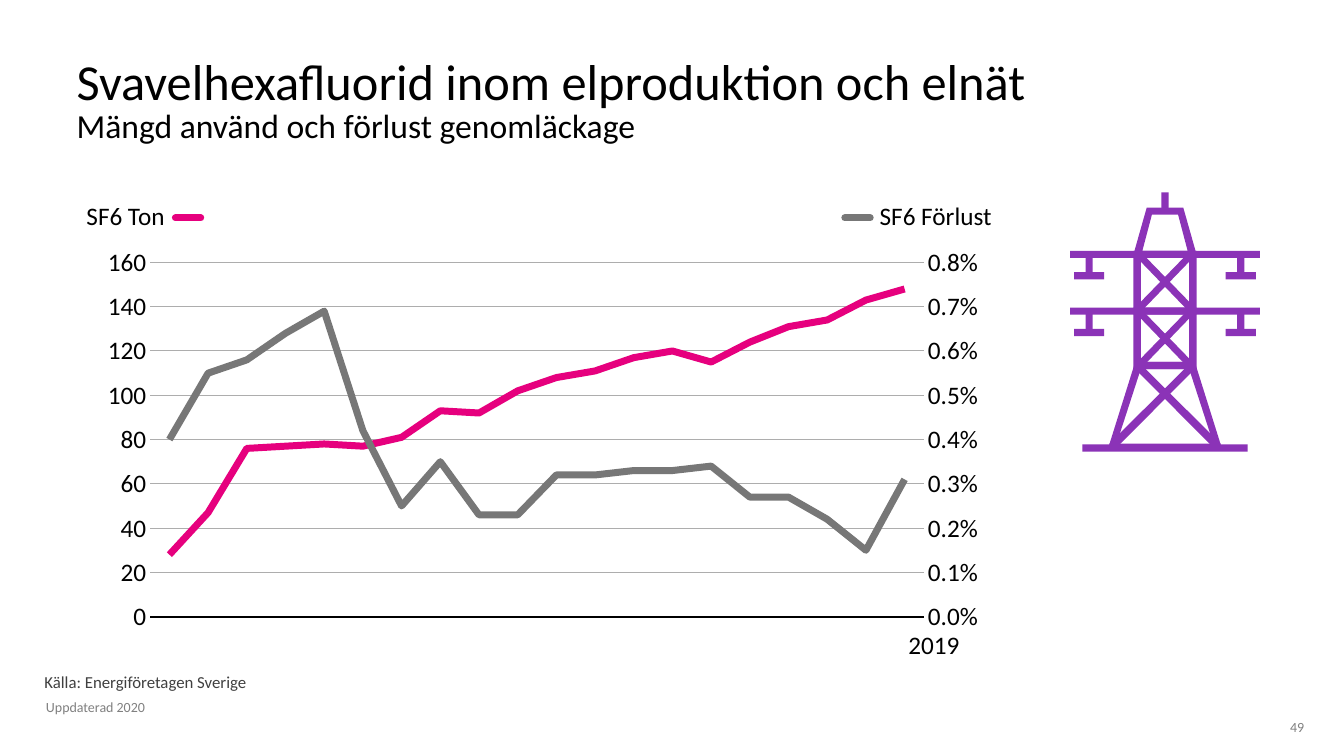
"""Build a slide on sulphur hexafluoride in Swedish power production and grids."""
import copy

import lxml.etree
import pptx
import pptx.chart.axis
import pptx.chart.data
import pptx.dml.color
import pptx.enum.chart
import pptx.enum.shapes
import pptx.enum.text
import pptx.oxml
import pptx.oxml.ns
import pptx.util

Cm = pptx.util.Cm
Pt = pptx.util.Pt
qn = pptx.oxml.ns.qn
ALIGN = pptx.enum.text.PP_ALIGN
ANCHOR = pptx.enum.text.MSO_ANCHOR

FONT = "Calibri"
BLACK, DARK, MUTED, RULE = "000000", "404040", "808080", "ADADAD"
PINK, GREY, PURPLE = "E6007E", "777777", "8B33B7"

TITLE = [("Svavelhexafluorid inom elproduktion och elnät", 36),
         ("Mängd använd och förlust genomläckage", 24)]
YEARS = [str(year) for year in range(2000, 2020)]
TONNES = [28, 47, 76, 77, 78, 77, 81, 93, 92, 102,
          108, 111, 117, 120, 115, 124, 131, 134, 143, 148]
LOSS_PERCENT = [0.40, 0.55, 0.58, 0.64, 0.69, 0.42, 0.25, 0.35, 0.23, 0.23,
                0.32, 0.32, 0.33, 0.33, 0.34, 0.27, 0.27, 0.22, 0.15, 0.31]
CHART_BOX = (1.12, 4.27, 30.96, 12.47)
PLOT_AREA = {"x": 0.086, "y": 0.188, "w": 0.63, "h": 0.716}
LEGEND = [("SF6 Ton", (1.93, 5.0, 3.02, 0.94), 4.42, PINK),
          ("SF6 Förlust", (21.92, 5.0, 3.89, 0.94), 21.29, GREY)]
LEGEND_Y, LEGEND_KEY = 5.49, 0.64
LABELS = [
    ("Källa: Energiföretagen Sverige", (1.12, 16.92, 12.34, 0.58),
     dict(size=12, color=DARK, anchor=ANCHOR.MIDDLE, inset=False)),
    ("49", (31.88, 18.11, 0.99, 0.51),
     dict(size=10, color=MUTED, align=ALIGN.RIGHT, inset=False, spacing=1.0)),
    ("2019", (22.58, 14.78, 1.91, 3.02),
     dict(align=ALIGN.CENTER, anchor=ANCHOR.MIDDLE)),
    ("Uppdaterad 2020", (0.91, 17.53, 3.43, 0.64), dict(size=10, color=MUTED)),
]

TOWER_X, BEAM = 29.36, 0.18
ARM_TOPS = [6.32, 7.75]
# top, half width at top, bottom, half width at bottom
FRAMES = [
    [(6.32, 0.80, 7.92, 0.80), (6.50, 0.61, 7.75, 0.61)],
    [(7.75, 0.80, 9.30, 0.80), (7.92, 0.61, 9.12, 0.61)],
    [(5.23, 0.46, 6.50, 0.82), (5.41, 0.33, 6.32, 0.57)],
    [(9.12, 0.75, 11.35, 1.45), (9.30, 0.61, 11.18, 1.22)],
]
ARM_BRACE = [(0.62, 1.55), (-0.75, 0.13), (-0.64, 0), (0.75, 1.43)]
LEG_BRACE = [(-1.27, 11.33), (-1.40, 11.18), (0.62, 9.17), (0.75, 9.30)]
SPIRE_AND_GROUND = [(0, 4.85, BEAM, 0.46), (0, 11.20, 4.17, BEAM)]


def rgb(color):
    return pptx.dml.color.RGBColor.from_string(color)


def write(frame, lines, align=ALIGN.LEFT, anchor=ANCHOR.TOP, size=18,
          color=BLACK, spacing=0.9, inset=True):
    frame.word_wrap = True
    frame.auto_size = pptx.enum.text.MSO_AUTO_SIZE.NONE
    frame.vertical_anchor = anchor
    if not inset:
        frame.margin_left = frame.margin_right = 0
        frame.margin_top = frame.margin_bottom = 0
    paragraph = frame.paragraphs[0]
    paragraph.alignment = align
    paragraph.line_spacing = spacing
    paragraph.space_before = Pt(0)
    for index, (text, points) in enumerate(
            [(lines, size)] if isinstance(lines, str) else lines):
        if index:
            paragraph.add_line_break()
        run = paragraph.add_run()
        run.text = text
        run.font.name, run.font.size = FONT, Pt(points)
        run.font.color.rgb = rgb(color)


def add_label(slide, text, box, **style):
    label = slide.shapes.add_textbox(*map(Cm, box))
    write(label.text_frame, text, **style)


def style_value_axis(axis, top, step, number_format):
    axis.minimum_scale, axis.maximum_scale, axis.major_unit = 0, top, step
    axis.tick_labels.number_format = number_format
    axis.tick_labels.number_format_is_linked = False


def add_loss_axis(chart):
    plot_area = chart.plots[0]._element.getparent()
    tonnes_plot = plot_area.find(qn("c:lineChart"))
    loss_plot = copy.deepcopy(tonnes_plot)
    tonnes_plot.remove(tonnes_plot.findall(qn("c:ser"))[1])
    loss_plot.remove(loss_plot.findall(qn("c:ser"))[0])
    tonnes_plot.addnext(loss_plot)
    years_axis = plot_area.find(qn("c:catAx"))
    tonnes_axis = plot_area.find(qn("c:valAx"))
    loss_years, loss_axis = map(copy.deepcopy, (years_axis, tonnes_axis))
    tonnes_axis.addnext(loss_years)
    loss_years.addnext(loss_axis)
    years_id, loss_id = "50010", "50020"
    for element, own, other in ((loss_years, years_id, loss_id),
                                (loss_axis, loss_id, years_id)):
        element.find(qn("c:axId")).set("val", own)
        element.find(qn("c:crossAx")).set("val", other)
    for reference, own in zip(loss_plot.findall(qn("c:axId")), (years_id, loss_id)):
        reference.set("val", own)
    loss_axis.find(qn("c:axPos")).set("val", "r")
    loss_axis.find(qn("c:crosses")).set("val", "max")
    pptx.chart.axis.CategoryAxis(loss_years).visible = False
    right_axis = pptx.chart.axis.ValueAxis(loss_axis)
    right_axis.has_major_gridlines = False
    style_value_axis(right_axis, 0.008, 0.001, "0.0%")


def add_chart(slide):
    data = pptx.chart.data.CategoryChartData()
    data.categories = YEARS
    data.add_series("SF6 Ton", TONNES)
    data.add_series("SF6 Förlust", [round(share / 100, 4) for share in LOSS_PERCENT])
    chart = slide.shapes.add_chart(pptx.enum.chart.XL_CHART_TYPE.LINE,
                                   *map(Cm, CHART_BOX), data).chart
    chart.has_legend = chart.has_title = False
    chart.font.name, chart.font.size = FONT, Pt(18)
    chart.font.color.rgb = rgb(BLACK)
    plot = chart.plots[0]
    plot.vary_by_categories = False
    for series, color in zip(plot.series, (PINK, GREY)):
        series.smooth = False
        series.marker.style = pptx.enum.chart.XL_MARKER_STYLE.NONE
        series.format.line.width = Pt(5)
        series.format.line.color.rgb = rgb(color)
    years, tonnes = chart.category_axis, chart.value_axis
    for axis in (years, tonnes):
        axis.major_tick_mark = pptx.enum.chart.XL_TICK_MARK.NONE
    years.tick_label_position = pptx.enum.chart.XL_TICK_LABEL_POSITION.NONE
    years.format.line.width = Pt(1.5)
    years.format.line.color.rgb = rgb(BLACK)
    tonnes.format.line.fill.background()
    tonnes.has_major_gridlines = True
    tonnes.major_gridlines.format.line.width = Pt(0.75)
    tonnes.major_gridlines.format.line.color.rgb = rgb(RULE)
    style_value_axis(tonnes, 160, 20, "#,##0")
    value_element = tonnes._element
    between = value_element.find(qn("c:crossBetween"))
    if between is None:
        between = lxml.etree.Element(qn("c:crossBetween"))
        value_element.find(qn("c:crosses")).addnext(between)
    between.set("val", "between")
    add_loss_axis(chart)
    plot_area = plot._element.getparent()
    for layout in plot_area.findall(qn("c:layout")):
        plot_area.remove(layout)
    layout = lxml.etree.Element(qn("c:layout"))
    plot_area.insert(0, layout)
    manual = lxml.etree.SubElement(layout, qn("c:manualLayout"))
    settings = {"layoutTarget": "inner", "xMode": "edge", "yMode": "edge", **PLOT_AREA}
    for tag, value in settings.items():
        lxml.etree.SubElement(manual, qn("c:" + tag)).set("val", str(value))


def paint_tower(part):
    part.shadow.inherit = False
    part.fill.solid()
    part.fill.fore_color.rgb = rgb(PURPLE)
    part.line.fill.background()


def add_outline(tower, *contours):
    placed = [[(Cm(TOWER_X + x), Cm(y)) for x, y in contour] for contour in contours]
    builder = tower.shapes.build_freeform(*placed[0][0])
    builder.add_line_segments(placed[0][1:], close=True)
    for contour in placed[1:]:
        builder.move_to(*contour[0])
        builder.add_line_segments(contour[1:], close=True)
    paint_tower(builder.convert_to_shape())


def add_tower(slide):
    tower = slide.shapes.add_group_shape()
    for frame in FRAMES:
        add_outline(tower, *[[(half_bottom, bottom), (-half_bottom, bottom),
                              (-half_top, top), (half_top, top)]
                             for top, half_top, bottom, half_bottom in frame])
    braces = [[(x, top + y) for x, y in ARM_BRACE] for top in ARM_TOPS] + [LEG_BRACE]
    bars = list(SPIRE_AND_GROUND)
    for top in ARM_TOPS:
        bars.append((0, top, 4.78, BEAM))
        for offset in (-1.91, 1.91):
            bars += [(offset, top + 0.08, BEAM, 0.56), (offset, top + 0.54, 0.76, BEAM)]
    for brace in braces:
        for side in (1, -1):
            add_outline(tower, [(side * x, y) for x, y in brace])
    for offset, top, width, height in bars:
        paint_tower(tower.shapes.add_shape(
            pptx.enum.shapes.MSO_SHAPE.RECTANGLE, Cm(TOWER_X + offset - width / 2),
            Cm(top), Cm(width), Cm(height)))


def add_legend(slide):
    for text, box, key_x, color in LEGEND:
        add_label(slide, text, box)
        key = slide.shapes.add_connector(
            pptx.enum.shapes.MSO_CONNECTOR.STRAIGHT, Cm(key_x), Cm(LEGEND_Y),
            Cm(key_x + LEGEND_KEY), Cm(LEGEND_Y))
        key.line.width = Pt(5)
        key.line.color.rgb = rgb(color)
        properties = key._element.spPr
        properties.find(qn("a:ln")).set("cap", "rnd")
        lxml.etree.SubElement(properties, qn("a:effectLst"))


def main():
    deck = pptx.Presentation()
    deck.slide_width, deck.slide_height = Cm(33.87), Cm(19.05)
    slide = deck.slides.add_slide(deck.slide_layouts[5])
    title = slide.shapes.title
    title.left, title.top, title.width, title.height = map(Cm, (1.93, 0.94, 30.15, 2.72))
    write(title.text_frame, TITLE, anchor=ANCHOR.BOTTOM, spacing=0.85, inset=False)
    add_chart(slide)
    add_tower(slide)
    add_legend(slide)
    for text, box, style in LABELS:
        add_label(slide, text, box, **style)
    deck.save("out.pptx")


if __name__ == "__main__":
    main()
